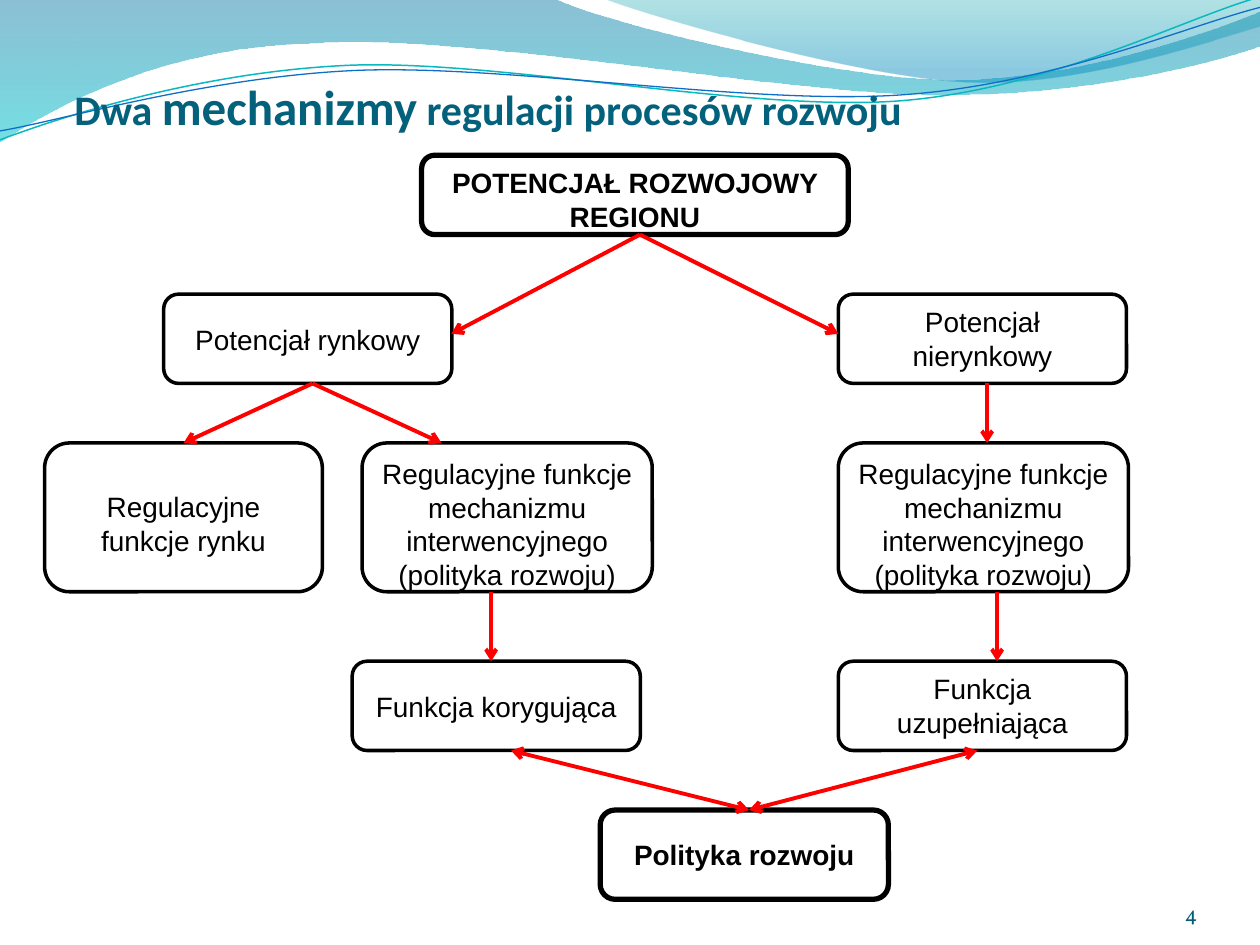
from pptx import Presentation
from pptx.dml.color import RGBColor
from pptx.enum.shapes import MSO_CONNECTOR, MSO_SHAPE
from pptx.enum.text import MSO_ANCHOR, PP_ALIGN
from pptx.oxml.ns import qn
from pptx.util import Cm, Pt
from lxml.etree import SubElement

BLACK = RGBColor(0x00, 0x00, 0x00)
WHITE = RGBColor(0xFF, 0xFF, 0xFF)
RED = RGBColor(0xFF, 0x00, 0x00)
TITLE_BLUE = RGBColor(0x04, 0x61, 0x7B)
NUMBER_BLUE = RGBColor(0x04, 0x5D, 0x75)
DEEP_BLUE = RGBColor(0x00, 0x74, 0xA1)
CYAN = RGBColor(0x00, 0xC6, 0xCF)
TEAL = RGBColor(0x00, 0xA1, 0xA9)
SKY_BLUE = RGBColor(0x00, 0x8B, 0xBF)
LINE_TEAL = RGBColor(0x0A, 0xB8, 0xBF)
LINE_BLUE = RGBColor(0x0F, 0x6F, 0xC6)

# Outlines in cm: a pair is a straight step, six numbers are a Bézier step.
LARGE_WAVE = [
    (0, 0), (11.18, -0.03),
    (12.09, 0.43, 16.87, 1.6, 19.25, 1.6),
    (21.67, 1.6, 24.33, 0.66, 25.4, 0.23),
    (25.43, 0.91),
    (24.97, 1.12, 22.1, 1.93, 18.95, 1.91),
    (15.8, 1.91, 9.7, 0.71, 6.53, 0.86),
    (3.28, 0.91, 1.17, 2.11, -0.03, 2.87),
]
SMALL_WAVE = [
    (12.17, -0.03),
    (12.93, 0.28, 17.32, 1.57, 19.53, 1.65),
    (21.74, 1.75, 24.41, 0.81, 25.4, 0.53),
    (25.4, 0),
]
TEAL_CURVE = [
    (-0.05, 2.22),
    (1.19, 1.82, 4.02, 1.04, 7.05, 1.05),
    (10.05, 1.07, 15.02, 2.37, 18.08, 2.29),
    (21.14, 2.2, 23.87, 0.91, 25.41, 0.55),
]
BLUE_CURVE = [
    (-0.04, 2.04),
    (1.16, 1.9, 4.18, 1.15, 7.2, 1.16),
    (10.25, 1.18, 15.13, 2.25, 18.18, 2.17),
    (21.21, 2.1, 23.93, 1.06, 25.45, 0.75),
]
CURVE_TILT = -2.7

# Tops of the diagram rows and box sizes, in cm
POTENTIAL_TOP, REGULATION_TOP, FUNCTION_TOP, POLICY_TOP = 5.93, 8.93, 13.33, 16.33
BOX_WIDTH, BOX_HEIGHT = 5.81, 1.8
REGULATION_WIDTH, REGULATION_HEIGHT = 5.85, 3
RIGHT_COLUMN = 16.9


class Diagram:
    font, size = "Arial", Pt(16)

    def __init__(self, slide):
        self.shapes = slide.shapes

    def outline(self, steps, closed):
        """Draw through all points, then join each Bézier step's three into one curve."""
        points = [(Cm(x), Cm(y)) for step in steps for x, y in zip(step[::2], step[1::2])]
        builder = self.shapes.build_freeform(*points[0])
        builder.add_line_segments(points[1:], close=closed)
        shape = builder.convert_to_shape()
        shape.shadow.inherit = False
        segments = iter(list(shape.element.spPr.iter(qn("a:lnTo"))))
        for step in steps[1:]:
            segment = next(segments)
            if len(step) == 6:
                segment.tag = qn("a:cubicBezTo")
                for extra in (next(segments), next(segments)):
                    segment.append(extra[0])
                    extra.getparent().remove(extra)
        return shape

    def wave(self, steps, stops):
        """Add a wave shaded downwards; stops are (position, colour, opacity %)."""
        shape = self.outline(steps, closed=True)
        shape.line.fill.background()
        shape.fill.gradient()
        shape.fill.gradient_angle = 270
        for stop, (position, color, _) in zip(shape.fill.gradient_stops, stops):
            stop.position = position
            stop.color.rgb = color
        colors = shape.element.spPr.iter(qn("a:srgbClr"))
        for element, (_, _, opacity) in zip(colors, stops):
            SubElement(element, qn("a:alpha"), val=str(opacity * 1000))

    def curve(self, steps, color, width):
        shape = self.outline(steps, closed=False)
        shape.rotation = CURVE_TILT
        shape.fill.background()
        shape.line.color.rgb = color
        shape.line.width = Pt(width)

    def text(self, left, top, width, height, runs, font, color,
             bold=False, align=PP_ALIGN.LEFT, margin_top=0):
        """Add bottom-anchored text; runs are (text, size) pairs."""
        box = self.shapes.add_textbox(Cm(left), Cm(top), Cm(width), Cm(height))
        frame = box.text_frame
        frame.word_wrap = True
        frame.vertical_anchor = MSO_ANCHOR.BOTTOM
        frame.margin_left = frame.margin_right = frame.margin_bottom = 0
        frame.margin_top = Cm(margin_top)
        paragraph = frame.paragraphs[0]
        paragraph.alignment = align
        paragraph.font.name = font
        paragraph.font.bold = bold
        paragraph.font.color.rgb = color
        for text, size in runs:
            run = paragraph.add_run()
            run.text = text
            run.font.size = Pt(size)

    def box(self, text, left, top, width=BOX_WIDTH, height=BOX_HEIGHT,
            strong=False, anchor=MSO_ANCHOR.TOP, margin_top=0.13):
        shape = self.shapes.add_shape(
            MSO_SHAPE.ROUNDED_RECTANGLE, Cm(left), Cm(top), Cm(width), Cm(height))
        shape.shadow.inherit = False
        shape.fill.solid()
        shape.fill.fore_color.rgb = WHITE
        shape.line.color.rgb = BLACK
        shape.line.width = Pt(3 if strong else 2)
        frame = shape.text_frame
        frame.word_wrap = True
        frame.vertical_anchor = anchor
        frame.margin_top = Cm(margin_top)
        paragraph = frame.paragraphs[0]
        paragraph.text = text
        paragraph.alignment = PP_ALIGN.CENTER
        paragraph.font.name = self.font
        paragraph.font.size = self.size
        paragraph.font.bold = strong
        paragraph.font.color.rgb = BLACK

    def arrow(self, start, end, both_ends=False):
        connector = self.shapes.add_connector(
            MSO_CONNECTOR.STRAIGHT, *(Cm(value) for value in start + end))
        connector.line.color.rgb = RED
        connector.line.width = Pt(2.25)
        properties = connector.element.spPr
        line = properties.find(qn("a:ln"))
        for tag in ("a:headEnd", "a:tailEnd") if both_ends else ("a:tailEnd",):
            SubElement(line, qn(tag), type="arrow")
        SubElement(properties, qn("a:effectLst"))


def main():
    presentation = Presentation()
    presentation.slide_width, presentation.slide_height = Cm(25.4), Cm(19.05)
    diagram = Diagram(presentation.slides.add_slide(presentation.slide_layouts[6]))

    diagram.wave(LARGE_WAVE, [(0, DEEP_BLUE, 45), (1, CYAN, 55)])
    diagram.wave(SMALL_WAVE, [(0, TEAL, 30), (0.8, SKY_BLUE, 45)])
    diagram.curve(TEAL_CURVE, LINE_TEAL, 0.85)
    diagram.curve(BLUE_CURVE, LINE_BLUE, 0.75)
    diagram.text(1.5, 0.53, 22.86, 2.2,
                 [("Dwa ", 24), ("mechanizmy", 28), (" regulacji procesów rozwoju", 24)],
                 "Calibri", TITLE_BLUE, bold=True, margin_top=0.13)

    middle = MSO_ANCHOR.MIDDLE
    diagram.box("POTENCJAŁ ROZWOJOWY REGIONU", 8.5, 3.13, 8.6, 1.6, strong=True)
    diagram.box("Potencjał rynkowy", 3.3, POTENTIAL_TOP, anchor=middle)
    diagram.box("Potencjał nierynkowy", RIGHT_COLUMN, POTENTIAL_TOP)
    diagram.box("Regulacyjne funkcje rynku", 0.9, REGULATION_TOP, 5.6,
                REGULATION_HEIGHT, margin_top=0.8)
    for left in (7.3, RIGHT_COLUMN):
        diagram.box("Regulacyjne funkcje mechanizmu interwencyjnego (polityka rozwoju)",
                    left, REGULATION_TOP, REGULATION_WIDTH, REGULATION_HEIGHT)
    diagram.box("Funkcja korygująca", 7.1, FUNCTION_TOP, anchor=middle)
    diagram.box("Funkcja uzupełniająca", RIGHT_COLUMN, FUNCTION_TOP)
    diagram.box("Polityka rozwoju", 12.1, POLICY_TOP, strong=True, anchor=middle)

    potential_bottom = POTENTIAL_TOP + BOX_HEIGHT
    for x in (9.1, RIGHT_COLUMN):
        diagram.arrow((12.9, 4.73), (x, 6.73))
    for x in (3.7, 8.9):
        diagram.arrow((6.3, potential_bottom), (x, REGULATION_TOP))
    for x in (9.9, 20.1):
        diagram.arrow((x, REGULATION_TOP + REGULATION_HEIGHT), (x, FUNCTION_TOP))
    diagram.arrow((19.9, potential_bottom), (19.9, REGULATION_TOP))
    for x in (10.3, 19.7):
        diagram.arrow((x, FUNCTION_TOP + BOX_HEIGHT), (15.1, POLICY_TOP), both_ends=True)

    diagram.text(22.02, 17.65, 2.12, 1.02, [("4", 12)], "Vollkorn", NUMBER_BLUE,
                 align=PP_ALIGN.RIGHT)
    presentation.save("out.pptx")


if __name__ == "__main__":
    main()
